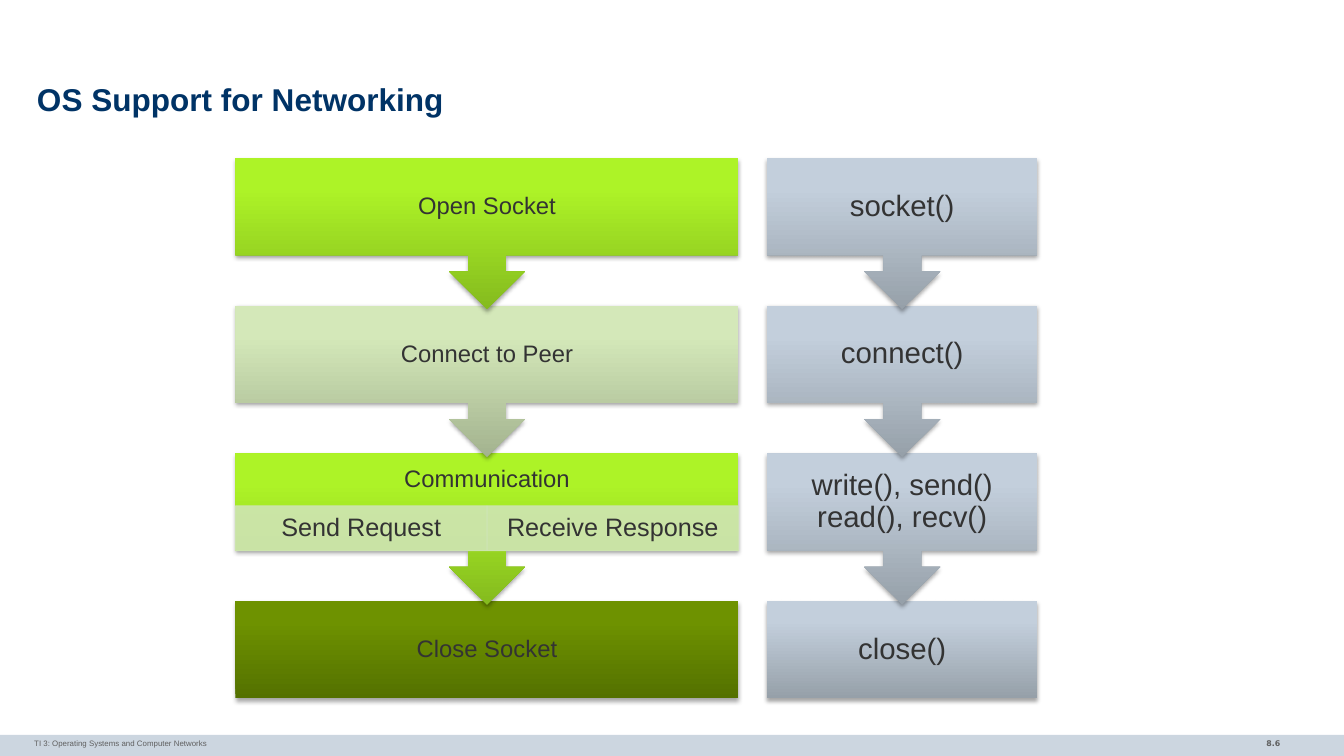
from lxml.etree import SubElement
from pptx import Presentation
from pptx.dml.color import RGBColor
from pptx.enum.shapes import MSO_SHAPE as Preset
from pptx.enum.text import MSO_ANCHOR as Anchor, PP_ALIGN as Align
from pptx.oxml.ns import qn
from pptx.util import Inches, Pt

WIDTH, HEIGHT = Inches(13.33), Inches(7.5)
NAVY = RGBColor(0x00, 0x33, 0x66)
TEXT = RGBColor(0x33, 0x33, 0x33)
GREY = RGBColor(0x5F, 0x5F, 0x5F)
BAND = RGBColor(0xCC, 0xD6, 0xE0)
MINT = RGBColor(0xCF, 0xE5, 0xB4)
LIME = (RGBColor(0x85, 0xBB, 0x1E), RGBColor(0xAD, 0xF3, 0x27))
PALE = (RGBColor(0xA3, 0xB3, 0x8F), RGBColor(0xD4, 0xE8, 0xB9))
OLIVE = (RGBColor(0x54, 0x71, 0x00), RGBColor(0x6E, 0x92, 0x00))
STEEL = (RGBColor(0x96, 0xA0, 0xA9), RGBColor(0xC3, 0xCF, 0xDC))

STEPS = [("Open Socket", LIME), ("Connect to Peer", PALE),
         ("Communication", LIME), ("Close Socket", OLIVE)]
CALLS = [("socket()", STEEL), ("connect()", STEEL),
         ("write(), send()\vread(), recv()", STEEL), ("close()", STEEL)]
EXCHANGES = ["Send Request", "Receive Response"]
ROW_SHARE, CALLOUT_SHARE = 0.18, 0.28
EXCHANGE_TOP, EXCHANGE_SHARE = 0.54, 0.46


def share(left, top, width, height):
    """Turn percentages of the slide into a box of lengths."""
    return (int(WIDTH * left / 100), int(HEIGHT * top / 100),
            int(WIDTH * width / 100), int(HEIGHT * height / 100))


def write(shape, text, size, color, align, margins, spacing=1.0, bold=False, font="Arial"):
    """Fill a shape with one formatted, vertically centred paragraph."""
    frame = shape.text_frame
    frame.word_wrap = True
    frame.vertical_anchor = Anchor.MIDDLE
    frame.margin_left = frame.margin_right = Inches(margins[0])
    frame.margin_top = frame.margin_bottom = Inches(margins[1])
    frame.text = text
    paragraph = frame.paragraphs[0]
    paragraph.alignment = align
    paragraph.line_spacing = spacing
    paragraph.font.name = font
    paragraph.font.size = Pt(size)
    paragraph.font.bold = bold
    paragraph.font.color.rgb = color


def add_flat(slide, box, color):
    """Add a plain rectangle in one colour."""
    shape = slide.shapes.add_shape(Preset.RECTANGLE, *box)
    shape.shadow.inherit = False
    shape.fill.solid()
    shape.fill.fore_color.rgb = color
    shape.line.fill.background()
    return shape


def add_shadow(shape):
    """Give a shape a soft shadow below it."""
    shape.shadow.inherit = False
    effects = shape._element.spPr.find(qn("a:effectLst"))
    shadow = SubElement(effects, qn("a:outerShdw"), blurRad=str(Pt(3.1)), dist=str(Pt(1.8)),
                        dir="5400000", rotWithShape="0")
    black = SubElement(shadow, qn("a:srgbClr"), val="000000")
    SubElement(black, qn("a:alpha"), val="35000")


def add_step(slide, preset, box, colors):
    """Add a shaded step that is dark at its foot."""
    shape = slide.shapes.add_shape(preset, *box)
    shape.fill.gradient()
    shape.fill.gradient_angle = 90
    for stop, color, position in zip(shape.fill.gradient_stops, colors, (0, 0.8)):
        stop.color.rgb = color
        stop.position = position
    shape.line.fill.background()
    add_shadow(shape)
    return shape


def add_flow(slide, box, steps, size, margin):
    """Stack steps in a box, the lower ones first, and return the row boxes."""
    left, top, width, height = box
    row_height = int(height * ROW_SHARE)
    pitch = (height - row_height) / (len(steps) - 1)
    rows = [(left, int(top + index * pitch), width, row_height) for index in range(len(steps))]
    for row, (text, colors) in reversed(list(zip(rows, steps))):
        last = row is rows[-1]
        preset = Preset.RECTANGLE if last else Preset.DOWN_ARROW_CALLOUT
        step_height = row_height if last else int(height * CALLOUT_SHARE)
        shape = add_step(slide, preset, (*row[:2], width, step_height), colors)
        if not last:
            shape.adjustments[3] = row_height / step_height
        write(shape, text, size, TEXT, Align.CENTER, (margin, margin), spacing=0.9)
        if text == "Communication":
            shape.text_frame.margin_top = 0
            shape.text_frame.margin_bottom = int(row_height * EXCHANGE_SHARE)
    return rows


def add_exchanges(slide, box):
    """Split the foot of a row into equal cells."""
    left, top, width, height = box
    cell_width = width // len(EXCHANGES)
    for index, text in enumerate(EXCHANGES):
        cell = (left + index * cell_width, top + int(height * EXCHANGE_TOP),
                cell_width, int(height * EXCHANGE_SHARE))
        shape = add_flat(slide, cell, MINT)
        shape.line.color.rgb = MINT
        shape.line.width = Pt(0.75)
        for color in shape._element.spPr.iter(qn("a:srgbClr")):
            SubElement(color, qn("a:alpha"), val="90000")
        write(shape, text, 18, TEXT, Align.CENTER, (0.14, 0.03), spacing=0.9)


def add_title(slide, box):
    """Place and format the title."""
    title = slide.shapes.title
    title.left, title.top, title.width, title.height = box
    write(title, "OS Support for Networking", 22.5, NAVY, Align.LEFT, (0, 0), 0.85, True)


def add_footer(slide, box):
    """Draw the bottom band with course name and page number."""
    left, top, width, height = box
    add_flat(slide, box, BAND)
    course = slide.shapes.add_textbox(int(width * 0.03), top - height // 10, int(width * 0.65), height)
    course.left = left + int(width * 0.0255)
    write(course, "TI 3: Operating Systems and Computer Networks", 5.6, GREY, Align.LEFT, (0, 0))
    page = slide.shapes.add_textbox(left + int(width * 0.83), top - height // 10, int(width * 0.13), height)
    write(page, "8.6", 5.6, GREY, Align.RIGHT, (0.1, 0), bold=True, font="DejaVu Sans")


def main():
    """Build and save the slide."""
    presentation = Presentation()
    presentation.slide_width, presentation.slide_height = WIDTH, HEIGHT
    slide = presentation.slides.add_slide(presentation.slide_layouts[5])
    add_footer(slide, share(0, 97.2, 100, 2.8))
    add_title(slide, share(2.75, 10.4, 94.5, 6.27))
    rows = add_flow(slide, share(17.52, 20.9, 37.43, 71.5), STEPS, 17, 0.13)
    add_exchanges(slide, rows[2])
    add_flow(slide, share(57.08, 20.9, 20.1, 71.5), CALLS, 21, 0.16)
    presentation.save("out.pptx")


if __name__ == "__main__":
    main()
